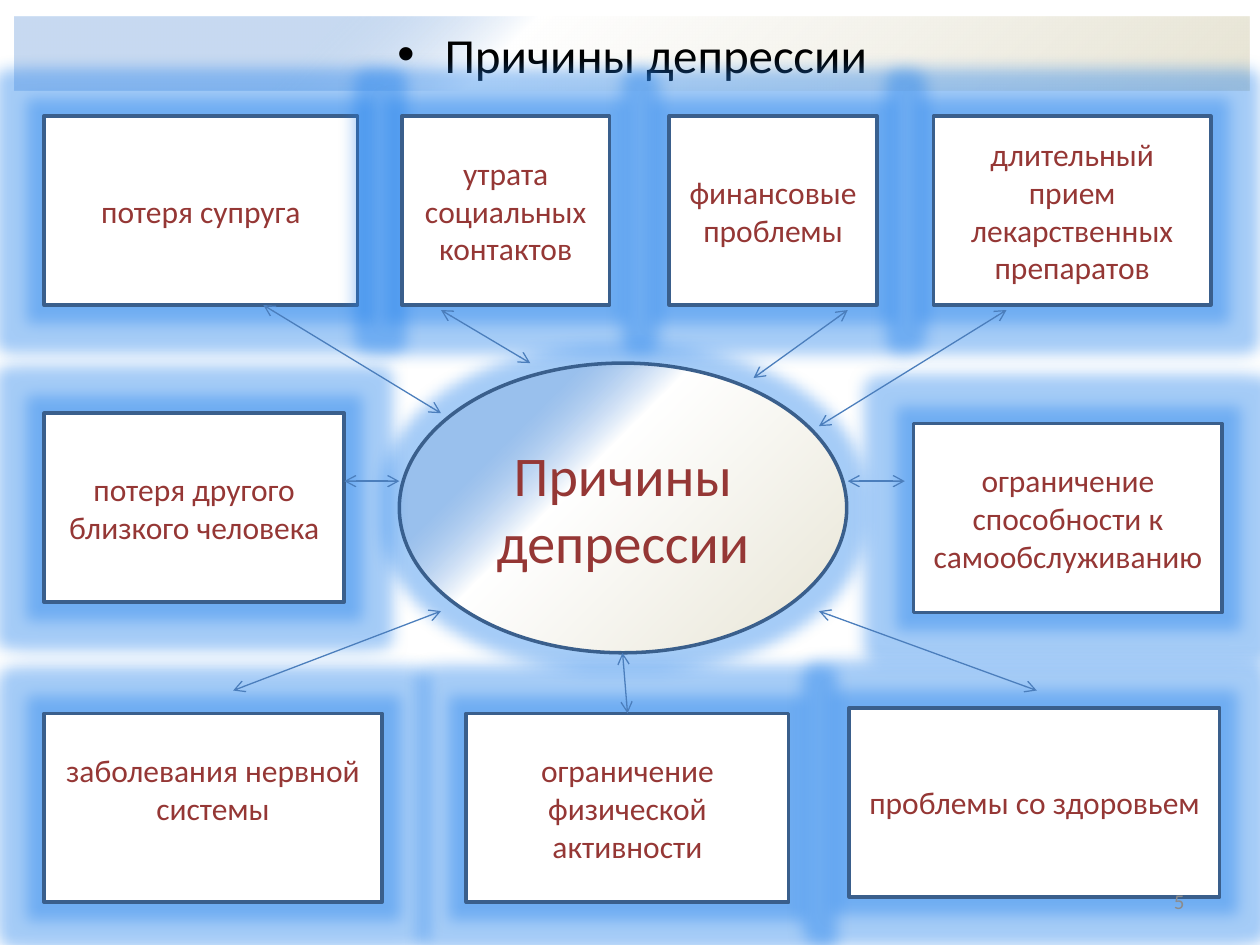
from lxml.etree import SubElement
from pptx import Presentation
from pptx.dml.color import RGBColor
from pptx.enum.shapes import MSO_CONNECTOR, MSO_SHAPE
from pptx.enum.text import MSO_ANCHOR, PP_ALIGN
from pptx.oxml import parse_xml
from pptx.oxml.ns import nsdecls, qn
from pptx.util import Cm, Pt

FONT = "Calibri"
TEXT_RED = "953735"
OUTLINE = "3A5F8C"
CARD_HEIGHT = 3.81

# text, left, top, width in cm inside the map
CAUSES = [
    ("потеря супруга", 0, 0, 6.32),
    ("утрата социальных контактов", 7.21, 0, 4.19),
    ("финансовые проблемы", 12.6, 0, 4.19),
    ("длительный прием лекарственных препаратов", 17.93, 0, 5.59),
    ("потеря другого близкого человека", 0, 5.99, 6.05),
    ("ограничение способности к самообслуживанию", 17.53, 6.2, 6.22),
    ("заболевания нервной системы", 0, 12.04, 6.81),
    ("ограничение физической активности", 8.51, 12.04, 6.5),
    ("проблемы со здоровьем", 16.23, 11.93, 7.47),
]
RAISED_CAUSE = "заболевания нервной системы"

# start x, start y, end x, end y in cm inside the map
ARROWS = [
    (4.42, 3.81, 8, 5.99),
    (8, 3.91, 9.8, 4.98),
    (19.4, 3.91, 15.62, 6.25),
    (6.05, 7.36, 7.16, 7.36),
    (11.66, 10.82, 11.76, 12.04),
    (14.3, 5.28, 16.2, 3.91),
    (16.2, 7.36, 17.35, 7.36),
    (20.01, 11.58, 15.62, 9.98),
    (8, 9.98, 3.81, 11.58),
]


def color(value):
    return RGBColor.from_string(value)


def style_paragraph(paragraph, size, ink, align=PP_ALIGN.CENTER):
    paragraph.alignment = align
    paragraph.font.name = FONT
    paragraph.font.size = Pt(size)
    paragraph.font.color.rgb = color(ink)


def fill_corner_gradient(shape):
    """Radial fill spreading from the bottom right corner."""
    shape.fill.background()
    no_fill = shape._element.spPr.find(qn("a:noFill"))
    gradient = parse_xml(
        f'<a:gradFill {nsdecls("a")} rotWithShape="1"><a:gsLst>'
        '<a:gs pos="0"><a:srgbClr val="E7E4D4"/></a:gs>'
        '<a:gs pos="60000"><a:srgbClr val="FFFFFF"/></a:gs>'
        '<a:gs pos="75000"><a:srgbClr val="8EB4E3">'
        '<a:alpha val="49000"/></a:srgbClr></a:gs></a:gsLst>'
        '<a:path path="circle"><a:fillToRect l="100000" t="100000"/></a:path>'
        '</a:gradFill>')
    no_fill.getparent().replace(no_fill, gradient)


def add_glow(shape):
    shape.shadow.inherit = False
    effects = shape._element.spPr.find(qn("a:effectLst"))
    glow = SubElement(effects, qn("a:glow"), rad=str(Pt(18)))
    tint = SubElement(glow, qn("a:srgbClr"), val="2080EC")
    SubElement(tint, qn("a:alpha"), val="40000")


def add_glowing_shape(slide, kind, box, text, size):
    shape = slide.shapes.add_shape(kind, *map(Cm, box))
    shape.fill.solid()
    shape.fill.fore_color.rgb = color("FFFFFF")
    shape.line.color.rgb = color(OUTLINE)
    shape.line.width = Pt(2)
    add_glow(shape)
    frame = shape.text_frame
    frame.word_wrap = True
    frame.vertical_anchor = MSO_ANCHOR.MIDDLE
    frame.text = text
    style_paragraph(frame.paragraphs[0], size, TEXT_RED)
    return shape


def add_double_arrow(slide, start_x, start_y, end_x, end_y):
    arrow = slide.shapes.add_connector(
        MSO_CONNECTOR.STRAIGHT, *map(Cm, (start_x, start_y, end_x, end_y)))
    arrow.line.color.rgb = color("4B7EBC")
    arrow.line.width = Pt(0.75)
    properties = arrow._element.spPr
    line = properties.find(qn("a:ln"))
    for end in ("a:headEnd", "a:tailEnd"):
        SubElement(line, qn(end), type="arrow")
    SubElement(properties, qn("a:effectLst"))


def add_heading(slide, box):
    heading = slide.shapes.title
    heading.left, heading.top, heading.width, heading.height = map(Cm, box)
    fill_corner_gradient(heading)
    frame = heading.text_frame
    frame.vertical_anchor = MSO_ANCHOR.MIDDLE
    frame.text = "Причины депрессии"
    paragraph = frame.paragraphs[0]
    layout = paragraph._p.get_or_add_pPr()
    layout.set("marL", str(Cm(0.95)))
    layout.set("indent", str(Cm(-0.95)))
    SubElement(layout, qn("a:buFont"), typeface="Arial")
    SubElement(layout, qn("a:buChar"), char="•")
    style_paragraph(paragraph, 28, "000000")


def add_cause_map(slide, box):
    left, top, width, height = box
    hub_width, hub_height = 9.02, 5.84
    hub_box = (left + 7.16, top + 4.98, hub_width, hub_height)
    hub = add_glowing_shape(slide, MSO_SHAPE.OVAL, hub_box,
                            "Причины\vдепрессии", 32)
    fill_corner_gradient(hub)
    for cause, x, y, card_width in CAUSES:
        card = add_glowing_shape(slide, MSO_SHAPE.RECTANGLE,
                                 (left + x, top + y, card_width, CARD_HEIGHT),
                                 cause, 18)
        if cause == RAISED_CAUSE:
            card.text_frame.margin_bottom = Cm(0.89)
    for start_x, start_y, end_x, end_y in ARROWS:
        add_double_arrow(slide, left + start_x, top + start_y,
                         left + end_x, top + end_y)


def add_page_number(slide, box):
    frame = slide.shapes.add_textbox(*map(Cm, box)).text_frame
    frame.word_wrap = True
    frame.vertical_anchor = MSO_ANCHOR.MIDDLE
    frame.text = "5"
    style_paragraph(frame.paragraphs[0], 12, "8C8C8C", PP_ALIGN.RIGHT)


def main():
    deck = Presentation()
    deck.slide_width, deck.slide_height = Cm(25.4), Cm(19.05)
    slide = deck.slides.add_slide(deck.slide_layouts.get_by_name("Title Only"))
    add_heading(slide, (0.3, 0.33, 24.89, 1.5))
    add_cause_map(slide, (0.89, 2.34, 23.75, 15.85))
    add_page_number(slide, (18.21, 17.65, 5.92, 1.02))
    deck.save("out.pptx")


if __name__ == "__main__":
    main()
